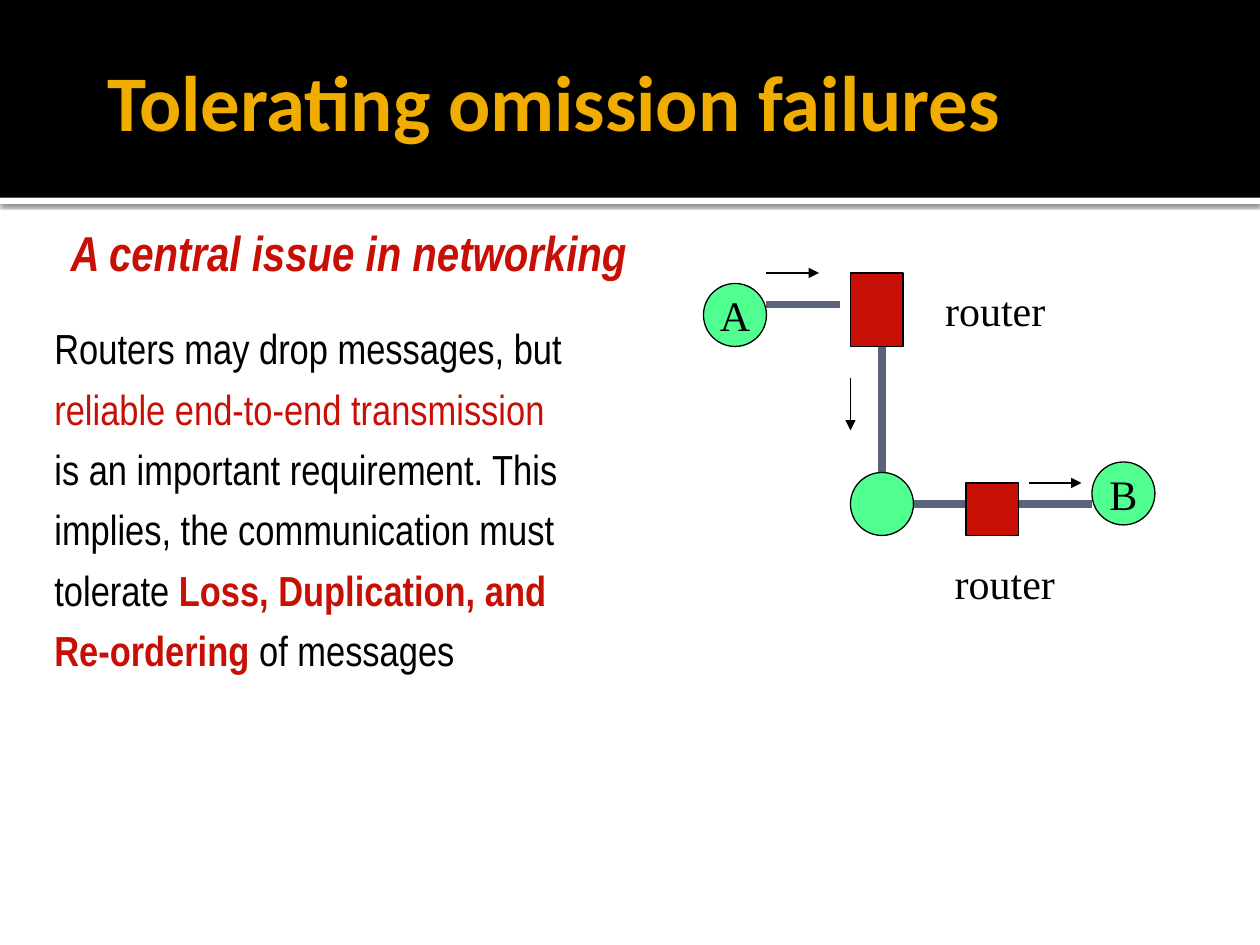
"""Build the slide on tolerating omission failures in a routed network."""
from lxml.etree import SubElement
from pptx import Presentation
from pptx.dml.color import RGBColor
from pptx.enum.shapes import MSO_CONNECTOR, MSO_SHAPE
from pptx.enum.text import MSO_ANCHOR, MSO_AUTO_SIZE, PP_ALIGN
from pptx.oxml.ns import qn
from pptx.util import Pt

BLACK = RGBColor(0x00, 0x00, 0x00)
WHITE = RGBColor(0xFF, 0xFF, 0xFF)
GOLD = RGBColor(0xF0, 0xAD, 0x00)
RED = RGBColor(0xC7, 0x0F, 0x05)
GREEN = RGBColor(0x51, 0xFF, 0x91)
SLATE = RGBColor(0x5A, 0x63, 0x78)

TITLE = "Tolerating omission failures"
SUBTITLE = "A central issue in networking"
EXPLANATION = [
    [("Routers may drop messages, but", "plain")],
    [("reliable end-to-end transmission", "key")],
    [("is an important requirement. This", "plain")],
    [("implies, the communication must", "plain")],
    [("tolerate ", "plain"), ("Loss, Duplication, and", "strong")],
    [("Re-ordering ", "strong"), ("of messages", "plain")],
]
HOSTS = [("A", 402, 162), ("B", 624, 264), ("", 486, 270)]
HOST_SIZE = 36
ROUTERS = [(486, 156, 30, 42), (552, 276, 30, 30)]
ROUTER_LABELS = [("router", 533, 159), ("router", 538.5, 315)]
LINKS = [(438, 174, 480, 174), (504, 198, 504, 270), (522, 288, 624, 288)]
MESSAGES = [(438, 156, 468, 156), (588, 276, 618, 276), (486, 216, 486, 246)]

FONTS = {
    "title": ({"name": "Calibri", "size": Pt(45), "bold": True}, GOLD),
    "subtitle": ({"name": "Arial Narrow", "size": Pt(28), "bold": True, "italic": True}, RED),
    "plain": ({"name": "Arial Narrow", "size": Pt(24), "bold": False}, BLACK),
    "key": ({"name": "Arial Narrow", "size": Pt(24), "bold": False}, RED),
    "strong": ({"name": "Arial Narrow", "size": Pt(24), "bold": True}, RED),
    "node": ({"name": "Times New Roman", "size": Pt(24)}, BLACK),
}
TITLE_PLACE = {"left": Pt(54), "top": Pt(12), "width": Pt(612), "height": Pt(90)}
TITLE_FRAME = {
    "vertical_anchor": MSO_ANCHOR.MIDDLE, "word_wrap": True, "auto_size": MSO_AUTO_SIZE.NONE,
    "margin_left": Pt(7.2), "margin_top": Pt(3.6), "margin_right": Pt(3.6), "margin_bottom": Pt(3.6),
}
SUBTITLE_FRAME = {"word_wrap": True, "margin_top": Pt(7.2)}
LABEL_FRAME = {"word_wrap": False, "auto_size": MSO_AUTO_SIZE.SHAPE_TO_FIT_TEXT}
HOST_FRAME = {"word_wrap": False, "vertical_anchor": MSO_ANCHOR.MIDDLE}


def apply(target, values):
    for name, value in values.items():
        setattr(target, name, value)


def add_run(paragraph, words, style):
    run = paragraph.add_run()
    run.text = words
    values, color = FONTS[style]
    apply(run.font, values)
    run.font.color.rgb = color


def add_block(slide, kind, place, fill, outlined=True):
    block = slide.shapes.add_shape(kind, *map(Pt, place))
    block.shadow.inherit = False
    block.fill.solid()
    block.fill.fore_color.rgb = fill
    if outlined:
        block.line.color.rgb = BLACK
        block.line.width = Pt(0.75)
    else:
        block.line.fill.background()
    return block


def add_text(slide, place, frame_values):
    frame = slide.shapes.add_textbox(*map(Pt, place)).text_frame
    apply(frame, frame_values)
    return frame


def add_line(slide, ends, color, width, arrow=False):
    line = slide.shapes.add_connector(MSO_CONNECTOR.STRAIGHT, *map(Pt, ends))
    line.line.color.rgb = color
    line.line.width = Pt(width)
    if arrow:
        SubElement(line.line._get_or_add_ln(), qn("a:tailEnd"), type="triangle")
    SubElement(line._element.spPr, qn("a:effectLst"))


def add_header(slide):
    strip = add_block(slide, MSO_SHAPE.RECTANGLE, (0, 113, 720, 3.6), WHITE, False)
    effects = strip._element.spPr.find(qn("a:effectLst"))
    shadow = SubElement(effects, qn("a:outerShdw"), blurRad=str(Pt(2.5)),
                        dist=str(Pt(0.8)), dir="5400000", rotWithShape="0")
    shade = SubElement(shadow, qn("a:srgbClr"), val=str(BLACK))
    SubElement(shade, qn("a:alpha"), val="60000")
    add_block(slide, MSO_SHAPE.RECTANGLE, (0, 0, 720, 113), BLACK, False)

    title = slide.shapes.title
    slide.shapes._spTree.append(title._element)
    apply(title, TITLE_PLACE)
    apply(title.text_frame, TITLE_FRAME)
    heading = title.text_frame.paragraphs[0]
    heading.alignment = PP_ALIGN.LEFT
    add_run(heading, TITLE, "title")


def add_explanation(slide):
    subtitle = add_text(slide, (24, 120, 522, 60), SUBTITLE_FRAME).paragraphs[0]
    indents = subtitle._p.get_or_add_pPr()
    indents.set("marL", str(Pt(34.5)))
    indents.set("indent", str(Pt(-25.2)))
    add_run(subtitle, SUBTITLE, "subtitle")

    frame = add_text(slide, (24, 175, 304.5, 214.5), LABEL_FRAME)
    for number, runs in enumerate(EXPLANATION):
        paragraph = frame.add_paragraph() if number else frame.paragraphs[0]
        paragraph.line_spacing = 1.2
        for words, style in runs:
            add_run(paragraph, words, style)


def add_network(slide):
    for ends in LINKS:
        add_line(slide, ends, SLATE, 4.5)
    for letter, left, top in HOSTS:
        host = add_block(slide, MSO_SHAPE.OVAL, (left, top, HOST_SIZE, HOST_SIZE), GREEN)
        if letter:
            apply(host.text_frame, HOST_FRAME)
            paragraph = host.text_frame.paragraphs[0]
            paragraph.alignment = PP_ALIGN.CENTER
            add_run(paragraph, letter, "node")
    for place in ROUTERS:
        add_block(slide, MSO_SHAPE.RECTANGLE, place, RED)
    for ends in MESSAGES:
        add_line(slide, ends, BLACK, 0.75, arrow=True)
    for label, left, top in ROUTER_LABELS:
        frame = add_text(slide, (left, top, 72, 36), LABEL_FRAME)
        add_run(frame.paragraphs[0], label, "node")


def main():
    deck = Presentation()
    apply(deck, {"slide_width": Pt(720), "slide_height": Pt(540)})
    slide = deck.slides.add_slide(deck.slide_layouts[5])
    slide.background.fill.solid()
    slide.background.fill.fore_color.rgb = WHITE
    add_header(slide)
    add_explanation(slide)
    add_network(slide)
    deck.save("out.pptx")


if __name__ == "__main__":
    main()
